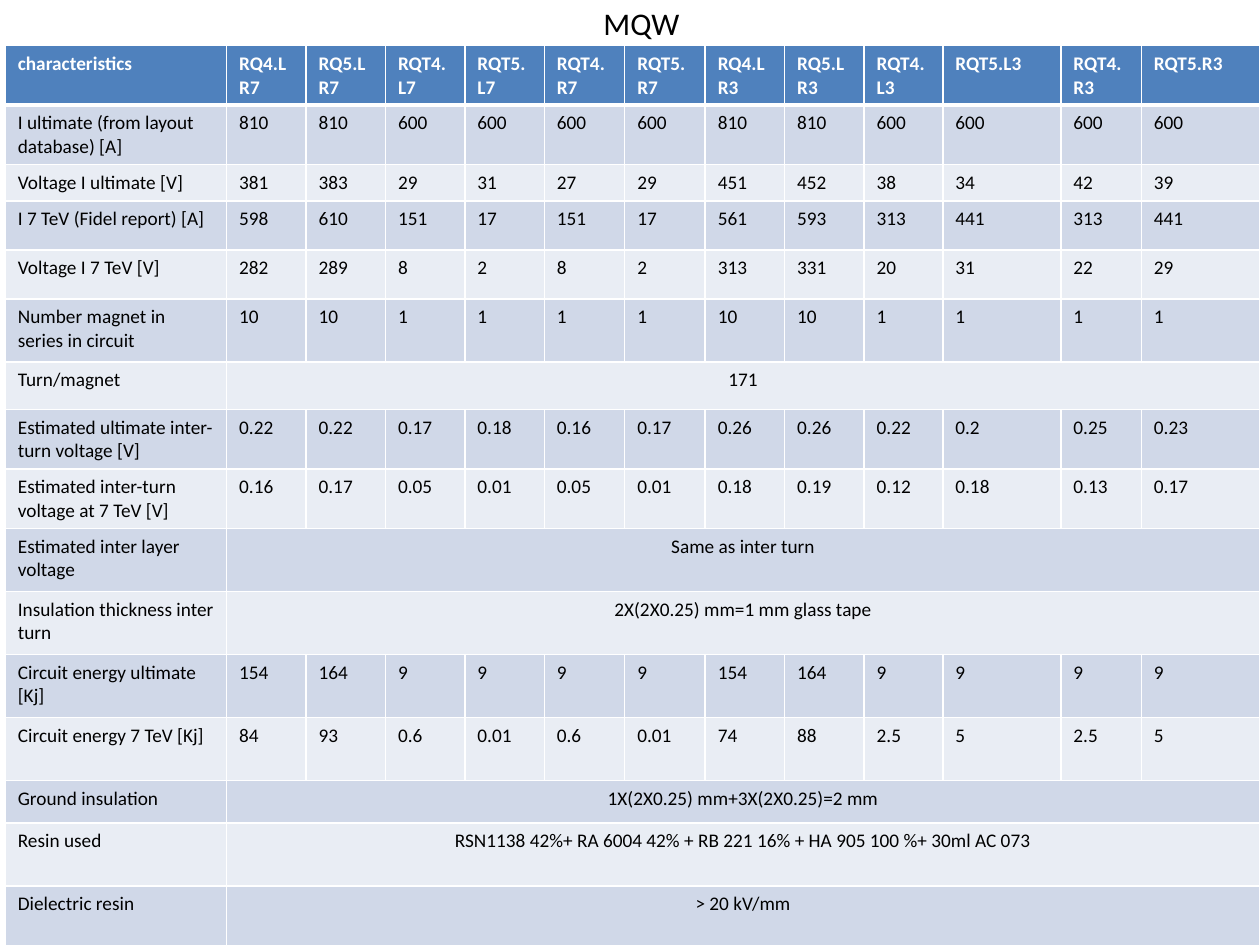
import pptx
import pptx.util
import pptx.dml.color
import pptx.enum.text
import pptx.oxml
import pptx.oxml.ns

Pt = pptx.util.Pt
RGBColor = pptx.dml.color.RGBColor
CENTER = pptx.enum.text.PP_ALIGN.CENTER
MIDDLE = pptx.enum.text.MSO_ANCHOR.MIDDLE

WHITE = RGBColor(0xFF, 0xFF, 0xFF)
BLACK = RGBColor(0x00, 0x00, 0x00)
HEADER_BLUE = RGBColor(0x4F, 0x81, 0xBD)
BANDS = (RGBColor(0xD0, 0xD8, 0xE8), RGBColor(0xE9, 0xED, 0xF4))
FONT = "Calibri"

COLUMN_WIDTHS = [126.5] + [45.4] * 4 + [46] * 2 + [45.4] * 2 + [45, 67.5, 46, 67.5]
CIRCUITS = ("RQ4.LR7 RQ5.LR7 RQT4.L7 RQT5.L7 RQT4.R7 RQT5.R7 "
            "RQ4.LR3 RQ5.LR3 RQT4.L3 RQT5.L3 RQT4.R3 RQT5.R3").split()

# Row height, label, then one value per circuit or a single text for all circuits
ROWS = [
    (34, "characteristics", CIRCUITS),
    (34, "I ultimate (from layout database) [A]",
     [810, 810, 600, 600, 600, 600, 810, 810, 600, 600, 600, 600]),
    (21, "Voltage I ultimate [V]",
     [381, 383, 29, 31, 27, 29, 451, 452, 38, 34, 42, 39]),
    (28, "I 7 TeV (Fidel report) [A]",
     [598, 610, 151, 17, 151, 17, 561, 593, 313, 441, 313, 441]),
    (28, "Voltage I 7 TeV [V]",
     [282, 289, 8, 2, 8, 2, 313, 331, 20, 31, 22, 29]),
    (36, "Number magnet in series in circuit",
     [10, 10, 1, 1, 1, 1, 10, 10, 1, 1, 1, 1]),
    (27, "Turn/magnet", "171"),
    (34, "Estimated ultimate inter-turn voltage [V]",
     [0.22, 0.22, 0.17, 0.18, 0.16, 0.17, 0.26, 0.26, 0.22, 0.2, 0.25, 0.23]),
    (34, "Estimated inter-turn voltage at 7 TeV [V]",
     [0.16, 0.17, 0.05, 0.01, 0.05, 0.01, 0.18, 0.19, 0.12, 0.18, 0.13, 0.17]),
    (36, "Estimated inter layer voltage", "Same as inter turn"),
    (36, "Insulation thickness inter turn", "2X(2X0.25) mm=1 mm glass tape"),
    (36, "Circuit energy ultimate [Kj]",
     [154, 164, 9, 9, 9, 9, 154, 164, 9, 9, 9, 9]),
    (36, "Circuit energy 7 TeV [Kj]",
     [84, 93, 0.6, 0.01, 0.6, 0.01, 74, 88, 2.5, 5, 2.5, 5]),
    (24.5, "Ground insulation", "1X(2X0.25) mm+3X(2X0.25)=2 mm"),
    (36, "Resin used",
     "RSN1138 42%+ RA 6004 42% + RB 221 16% + HA 905 100 %+ 30ml AC 073"),
    (36, "Dielectric resin", "> 20 kV/mm"),
]


def set_borders(cell, bottom_width, top_width):
    properties = cell._tc.get_or_add_tcPr()
    for side, width in (("L", 1), ("R", 1), ("T", top_width), ("B", bottom_width)):
        properties.append(pptx.oxml.parse_xml(
            f'<a:ln{side} {pptx.oxml.ns.nsdecls("a")} w="{int(Pt(width))}">'
            f'<a:solidFill><a:srgbClr val="{WHITE}"/></a:solidFill></a:ln{side}>'))


def style_cell(cell, row_index):
    is_header = row_index == 0
    set_borders(cell, 3 if is_header else 1, 3 if row_index == 1 else 1)
    cell.fill.solid()
    cell.fill.fore_color.rgb = HEADER_BLUE if is_header else BANDS[(row_index - 1) % 2]
    font = cell.text_frame.paragraphs[0].font
    font.name = FONT
    font.size = Pt(11)
    font.bold = is_header
    font.color.rgb = WHITE if is_header else BLACK


def add_title(slide, left, top, width, height):
    box = slide.shapes.add_textbox(Pt(left), Pt(top), Pt(width), Pt(height))
    frame = box.text_frame
    frame.word_wrap = True
    frame.vertical_anchor = MIDDLE
    paragraph = frame.paragraphs[0]
    paragraph.text = "MQW"
    paragraph.alignment = CENTER
    paragraph.font.name = FONT
    paragraph.font.size = Pt(18)
    paragraph.font.color.rgb = BLACK


def add_characteristics_table(slide, left, top):
    table = slide.shapes.add_table(
        len(ROWS), len(COLUMN_WIDTHS), Pt(left), Pt(top),
        Pt(sum(COLUMN_WIDTHS)), Pt(sum(row[0] for row in ROWS))).table
    for column, width in zip(table.columns, COLUMN_WIDTHS):
        column.width = Pt(width)
    for row_index, (height, label, values) in enumerate(ROWS):
        table.rows[row_index].height = Pt(height)
        shared = isinstance(values, str)
        texts = [label, values] if shared else [label, *values]
        for column_index, text in enumerate(texts):
            table.cell(row_index, column_index).text = str(text)
        if shared:
            first = table.cell(row_index, 1)
            first.merge(table.cell(row_index, len(COLUMN_WIDTHS) - 1))
            first.text_frame.paragraphs[0].alignment = CENTER
        for cell in table.rows[row_index].cells:
            style_cell(cell, row_index)


def main():
    presentation = pptx.Presentation()
    presentation.slide_width = Pt(720)
    presentation.slide_height = Pt(540)
    slide = presentation.slides.add_slide(presentation.slide_layouts[6])
    add_title(slide, 42.5, 0, 648, 26)
    add_characteristics_table(slide, 3, 26)
    presentation.save("out.pptx")


if __name__ == "__main__":
    main()
